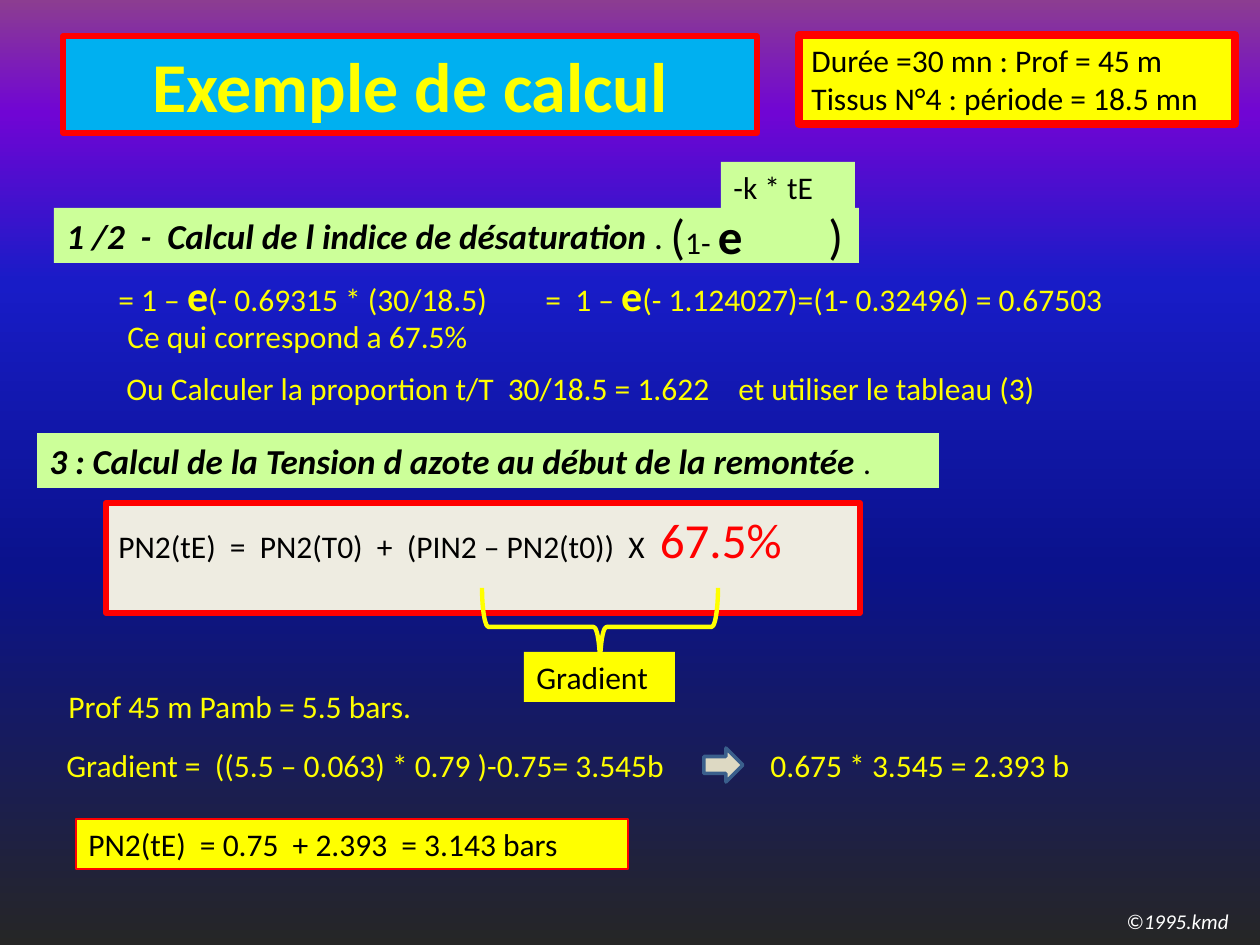
"""Build the slide of a worked desaturation example for a 45 m dive."""
from lxml import etree
from pptx import Presentation
from pptx.dml.color import RGBColor
from pptx.enum.shapes import MSO_SHAPE
from pptx.enum.text import PP_ALIGN
from pptx.oxml.ns import qn
from pptx.util import Emu, Pt

RIGHT_BRACE = MSO_SHAPE.RIGHT_BRACE
RIGHT_ARROW = MSO_SHAPE.RIGHT_ARROW
CENTER = PP_ALIGN.CENTER
SCALE = 914400 / 126
FONT = "Calibri"
COLORS = {
    "yellow": "FFFF00", "red": "FF0000", "black": "000000", "white": "FFFFFF",
    "lime": "CCFF99", "cream": "EEECE1", "sky": "00B0F0", "sand": "DDD9C3", "steel": "3A5F8C",
}
BACKGROUND_STOPS = [(0, "262626"), (40, "0A128C"), (70, "181CC7"), (88, "7005D4"), (100, "8C3D91")]


def px(*lengths):
    return [Emu(round(length * SCALE)) for length in lengths]


def add_text(box, paragraphs, color="black", fill=None, line=None, wrap=True):
    """Add a text box; a run is (text, size, style letters, optional colour)."""
    shape = slide.shapes.add_textbox(*px(*box))
    if fill:
        shape.fill.solid()
        shape.fill.fore_color.rgb = RGBColor.from_string(COLORS[fill])
    if line:
        shape.line.color.rgb = RGBColor.from_string(COLORS["red"])
        shape.line.width = Pt(line)
    frame = shape.text_frame
    frame.word_wrap = wrap
    for index, runs in enumerate(paragraphs):
        paragraph = frame.add_paragraph() if index else frame.paragraphs[0]
        for text, size, style, *own_color in runs:
            run = paragraph.add_run()
            run.text = text
            run.font.name = FONT
            run.font.size = Pt(size)
            run.font.bold = "b" in style
            run.font.italic = "i" in style
            run.font.color.rgb = RGBColor.from_string(COLORS[own_color[0] if own_color else color])
    return shape


presentation = Presentation()
presentation.slide_width, presentation.slide_height = px(1260, 945)
slide = presentation.slides.add_slide(presentation.slide_layouts[6])

background = slide.background.fill
background.gradient()
background.gradient_angle = 90
stop_list = slide.element.find(".//" + qn("a:gsLst"))
for stop in list(stop_list):
    stop_list.remove(stop)
for position, color in BACKGROUND_STOPS:
    stop = etree.SubElement(stop_list, qn("a:gs"), pos=str(position * 1000))
    etree.SubElement(stop, qn("a:srgbClr"), val=color)

add_text((54, 208, 805, 55), [[("1 /2  -  Calcul de l indice de désaturation ", 20, "bi"), (".", 20, "i")]],
         fill="lime")
add_text((658, 199, 110, 72), [[("(", 28, ""), ("1- ", 18, ""), ("e", 28, "b")]])
add_text((816, 199, 50, 72), [[(")", 28, "")]])
add_text((721, 162, 134, 50), [[("-k * tE", 18, "")]], fill="lime")

for left, start, exponent in [
    (106, "= 1 – ", "(- 0.69315 * (30/18.5)"),
    (533, "=  1 – ", "(- 1.124027)=(1- 0.32496) = 0.67503"),
]:
    add_text((left, 263, 620, 63), [[(start, 18, ""), ("e", 24, "b"), (exponent, 18, "")]], "yellow")

for left, top, width, text in [
    (115, 311, 588, "Ce qui correspond a 67.5%"),
    (114, 363, 612, "Ou Calculer la proportion t/T  30/18.5 = 1.622"),
    (726, 363, 390, "et utiliser le tableau (3)"),
    (56, 681, 460, "Prof 45 m Pamb = 5.5 bars."),
    (54, 740, 640, "Gradient =  ((5.5 – 0.063) * 0.79 )-0.75= 3.545b"),
    (758, 740, 450, "0.675 * 3.545 = 2.393 b"),
]:
    add_text((left, top, width, 50), [[(text, 18, "")]], "yellow")

add_text((37, 433, 902, 55),
         [[("3 : Calcul de la Tension d azote au début de la remontée ", 20, "bi"), (".", 18, "")]], fill="lime")
add_text((106, 503, 754, 110),
         [[("PN2(tE)  =  PN2(T0)  +  (PIN2 – PN2(t0))  X  ", 18, ""), ("67.5%", 28, "", "red")]],
         fill="cream", line=3.5)
add_text((524, 652, 151, 50), [[("Gradient", 18, "")]], fill="yellow")

brace = slide.shapes.add_shape(RIGHT_BRACE, *px(561, 509, 78, 236))
brace.rotation = 90
brace.fill.background()
arrow = slide.shapes.add_shape(RIGHT_ARROW, *px(704, 748, 39, 34))
arrow.fill.solid()
arrow.fill.fore_color.rgb = RGBColor.from_string(COLORS["sand"])
for shape, color, width in [(brace, "yellow", 2.5), (arrow, "steel", 2)]:
    shape.shadow.inherit = False
    shape.line.color.rgb = RGBColor.from_string(COLORS[color])
    shape.line.width = Pt(width)

add_text((76, 819, 552, 50), [[("PN2(tE)  = 0.75  + 2.393  = 3.143 bars", 18, "")]], fill="yellow", line=1)
title = add_text((63, 36, 694, 97), [[("Exemple de calcul", 40, "b")]], "yellow", fill="sky", line=3)
title.text_frame.paragraphs[0].alignment = CENTER
add_text((799, 35, 436, 89),
         [[("Durée =30 mn : Prof = 45 m", 18, "")], [("Tissus N°4 : période = 18.5 mn", 18, "")]],
         fill="yellow", line=4.5)
add_text((1114, 902, 128, 38), [[("©1995.kmd", 12, "i")]], "white", wrap=False)

presentation.save("out.pptx")
